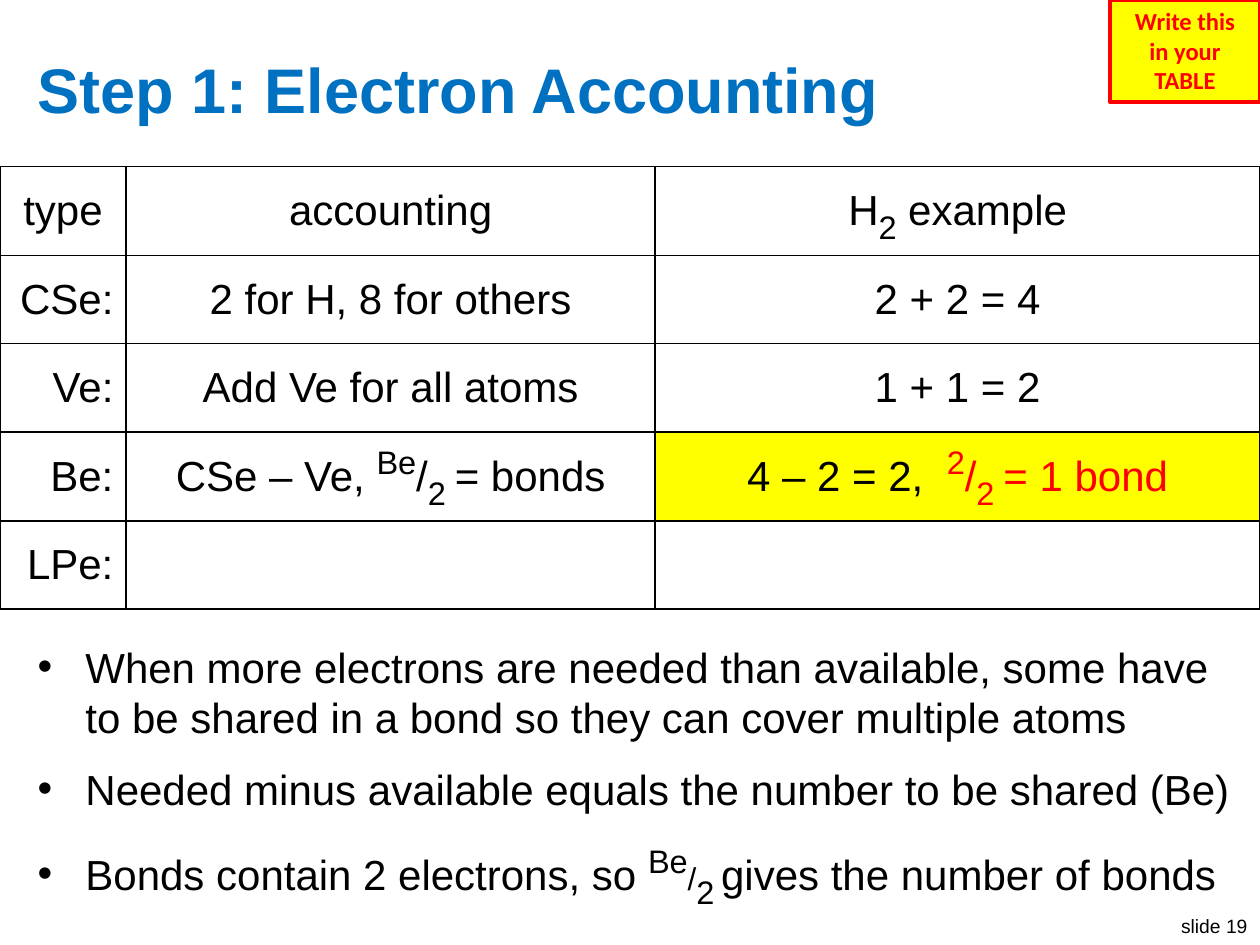
from lxml.etree import SubElement
from pptx import Presentation
from pptx.dml.color import RGBColor
from pptx.enum.shapes import MSO_SHAPE
from pptx.enum.text import MSO_ANCHOR, PP_ALIGN
from pptx.oxml.ns import qn
from pptx.util import Inches, Pt

BLACK, WHITE, RED, YELLOW, BLUE = "000000", "FFFFFF", "FF0000", "FFFF00", "0070C0"
SUPER = {"size": 32, "baseline": 30}
SUB = {"size": 32, "baseline": -25}
RED_TEXT = {"color": RED}

# A paragraph is a string or a list of runs; a run is a string or (string, format).
TITLE = "Step 1: Electron Accounting"
REMINDER = ["Write this", "in your TABLE"]
FOOTER = "slide 19"
ACCOUNTING = [
    ["type", "accounting", ["H", ("2", SUB), " example"]],
    ["CSe:", "2 for H, 8 for others", "2 + 2 = 4"],
    ["Ve:", "Add Ve for all atoms", "1 + 1 = 2"],
    ["Be:",
     ["CSe – Ve, ", ("Be", SUPER), "/", ("2 ", SUB), "= bonds"],
     ["4 – 2 = 2,  ", ("2", SUPER | RED_TEXT), ("/", RED_TEXT),
      ("2 ", SUB | RED_TEXT), ("= 1 bond", RED_TEXT)]],
    ["LPe:", "", ""],
]
HIGHLIGHTED = (3, 2)
COLUMN_WIDTHS = [1, 4.2, 4.8]
ROW_HEIGHT = 0.7
NOTES_ON_BONDS = [
    "When more electrons are needed than available, some have to be shared "
    "in a bond so they can cover multiple atoms",
    "Needed minus available equals the number to be shared (Be)",
    ["Bonds contain 2 electrons, so ", ("Be", SUPER), ("/", {"size": 18}),
     ("2", SUB), (" ", {"baseline": -25}), "gives the number of bonds"],
]


def rgb(color):
    return RGBColor.from_string(color)


def write(frame, paragraphs, size=24, font="Arial", color=BLACK, bold=False,
          align=PP_ALIGN.LEFT, anchor=MSO_ANCHOR.TOP, wrap=True, before=0, bullet=False):
    frame.word_wrap = wrap
    frame.vertical_anchor = anchor
    for index, runs in enumerate(paragraphs):
        paragraph = frame.paragraphs[0] if index == 0 else frame.add_paragraph()
        paragraph.alignment = align
        paragraph.space_before = Pt(before)
        if bullet:
            add_bullet(paragraph)
        for part in [runs] if isinstance(runs, str) else runs:
            text, own = (part, {}) if isinstance(part, str) else part
            run = paragraph.add_run()
            run.text = text
            run.font.name = font
            run.font.bold = bold
            run.font.size = Pt(own.get("size", size))
            run.font.color.rgb = rgb(own.get("color", color))
            if "baseline" in own:
                run.font._element.set("baseline", str(own["baseline"] * 1000))


def add_bullet(paragraph):
    properties = paragraph._p.get_or_add_pPr()
    properties.set("marL", str(Inches(0.38)))
    properties.set("indent", str(-Inches(0.38)))
    SubElement(properties, qn("a:buFont"), typeface="Arial")
    SubElement(properties, qn("a:buChar"), char="•")


def add_text(slide, box, paragraphs, **style):
    frame = slide.shapes.add_textbox(*map(Inches, box)).text_frame
    write(frame, paragraphs, **style)


def add_borders(cell):
    properties = cell._tc.get_or_add_tcPr()
    for position, side in enumerate(("lnL", "lnR", "lnT", "lnB")):
        line = properties.makeelement(qn(f"a:{side}"), {"w": str(Pt(1))})
        fill = SubElement(line, qn("a:solidFill"))
        SubElement(fill, qn("a:srgbClr"), val=BLACK)
        properties.insert(position, line)


def add_accounting_table(slide):
    box = (0, 1.32, sum(COLUMN_WIDTHS), ROW_HEIGHT * len(ACCOUNTING))
    table = slide.shapes.add_table(
        len(ACCOUNTING), len(COLUMN_WIDTHS), *map(Inches, box)).table
    for column, width in zip(table.columns, COLUMN_WIDTHS):
        column.width = Inches(width)
    for r, entries in enumerate(ACCOUNTING):
        table.rows[r].height = Inches(ROW_HEIGHT)
        for c, entry in enumerate(entries):
            cell = table.cell(r, c)
            cell.fill.solid()
            cell.fill.fore_color.rgb = rgb(YELLOW if (r, c) == HIGHLIGHTED else WHITE)
            cell.vertical_anchor = MSO_ANCHOR.MIDDLE
            is_label = c == 0 and r > 0
            write(cell.text_frame, [entry] if entry else [],
                  align=PP_ALIGN.RIGHT if is_label else PP_ALIGN.CENTER,
                  anchor=None)
            add_borders(cell)


def add_reminder(slide):
    reminder = slide.shapes.add_shape(
        MSO_SHAPE.RECTANGLE, *map(Inches, (8.81, 0, 1.19, 0.81)))
    reminder.shadow.inherit = False
    reminder.fill.solid()
    reminder.fill.fore_color.rgb = rgb(YELLOW)
    reminder.line.color.rgb = rgb(RED)
    reminder.line.width = Pt(2.25)
    write(reminder.text_frame, REMINDER, size=14, font="Calibri", color=RED,
          bold=True, align=PP_ALIGN.CENTER)


def main():
    deck = Presentation()
    deck.slide_width, deck.slide_height = Inches(10), Inches(7.5)
    slide = deck.slides.add_slide(deck.slide_layouts[6])
    add_text(slide, (9.25, 7.21, 0.75, 0.29), [FOOTER], size=11,
             align=PP_ALIGN.RIGHT, wrap=False)
    add_text(slide, (0.2, 0.3, 9.6, 0.8), [TITLE], size=36, color=BLUE, bold=True,
             anchor=MSO_ANCHOR.MIDDLE)
    add_text(slide, (0.2, 5.04, 9.8, 2.22), NOTES_ON_BONDS, before=12, bullet=True)
    add_accounting_table(slide)
    add_reminder(slide)
    deck.save("out.pptx")


if __name__ == "__main__":
    main()
